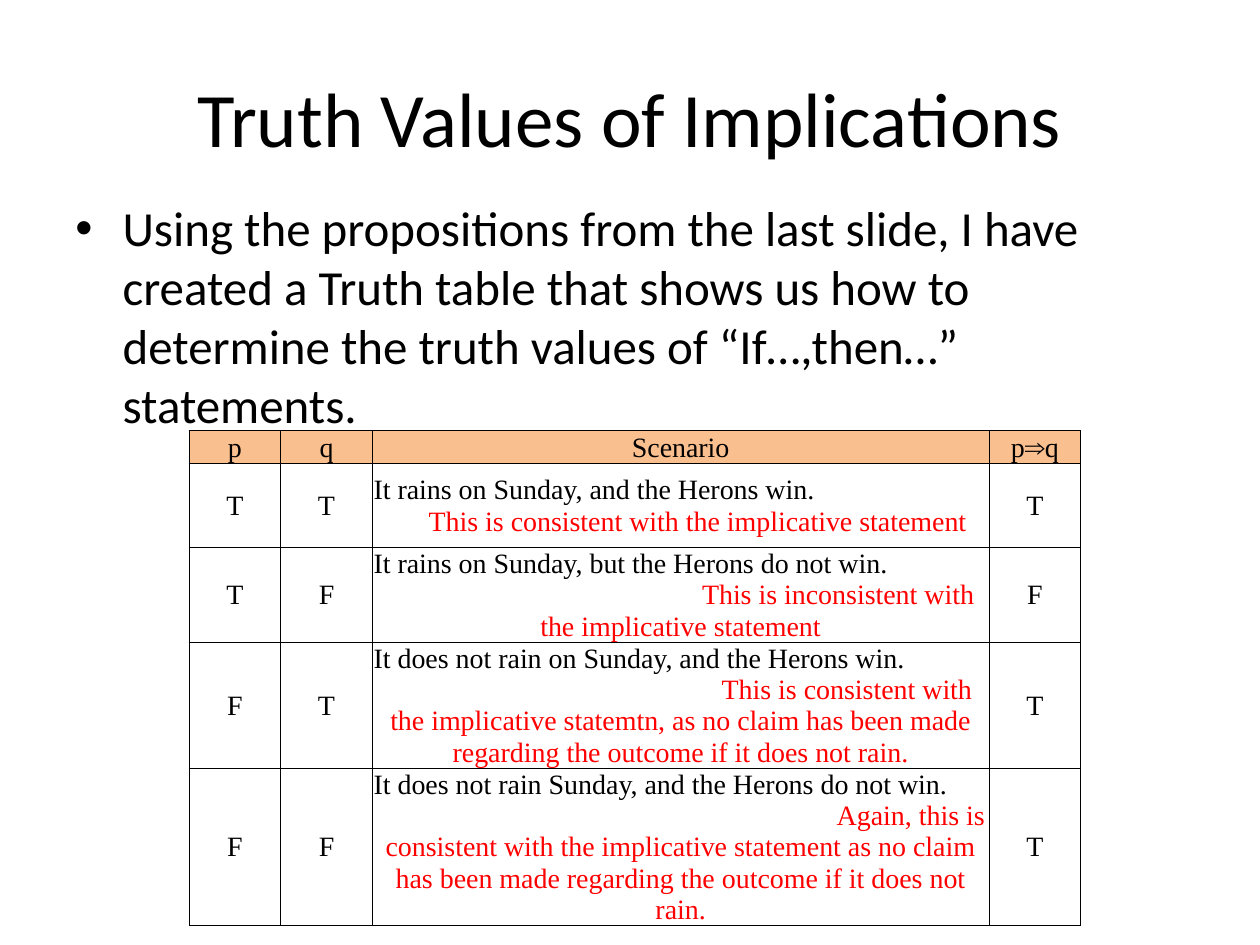
"""Build the slide on truth values of implications."""
import lxml.etree
import pptx
import pptx.dml.color
import pptx.enum.text
import pptx.oxml.ns
import pptx.util

Pt = pptx.util.Pt
ALIGN = pptx.enum.text.PP_ALIGN
ANCHOR = pptx.enum.text.MSO_ANCHOR
qn = pptx.oxml.ns.qn
COLOURS = {"text": "000000", "verdict": "FF0000", "header": "FABF8F", "border": "000000"}


def add_span(para, text, size, font, colour="text"):
    span = para.add_run()
    span.text = text
    span.font.size = Pt(size)
    span.font.name = font
    span.font.color.rgb = pptx.dml.color.RGBColor.from_string(COLOURS[colour])


def add_borders(cell):
    properties = cell._tc.get_or_add_tcPr()
    for position, side in enumerate(("lnL", "lnR", "lnT", "lnB")):
        line = lxml.etree.Element(qn(f"a:{side}"), w=str(Pt(0.5)))
        fill = lxml.etree.SubElement(line, qn("a:solidFill"))
        lxml.etree.SubElement(fill, qn("a:srgbClr"), val=COLOURS["border"])
        properties.insert(position, line)


deck = pptx.Presentation()
deck.slide_width, deck.slide_height = Pt(720), Pt(540)
page = deck.slides.add_slide(deck.slide_layouts[5])

title = page.shapes.title
title.left, title.top, title.width, title.height = Pt(36), Pt(21.6), Pt(648), Pt(90)
title.text_frame.vertical_anchor = ANCHOR.MIDDLE
para = title.text_frame.paragraphs[0]
para.alignment = ALIGN.CENTER
add_span(para, "Truth Values of Implications", 44, "Calibri")

box = page.shapes.add_textbox(Pt(36), Pt(109.5), Pt(648), Pt(372))
box.text_frame.word_wrap = True
para = box.text_frame.paragraphs[0]
properties = para._p.get_or_add_pPr()
properties.set("marL", str(Pt(27)))
properties.set("indent", str(Pt(-27)))
lxml.etree.SubElement(properties, qn("a:buFont"), typeface="Arial")
lxml.etree.SubElement(properties, qn("a:buChar"), char="•")
add_span(para, "Using the propositions from the last slide, I have created a Truth table that "
         "shows us how to determine the truth values of “If…,then…” statements.", 28, "Calibri")

headers = ("p", "q", "Scenario", "p⇒q")
scenarios = [
    ("T", "T", "It rains on Sunday, and the Herons win.",
     "This is consistent with the implicative statement", 19.5, "T"),
    ("T", "F", "It rains on Sunday, but the Herons do not win.",
     "This is inconsistent with the implicative statement", 180, "F"),
    ("F", "T", "It does not rain on Sunday, and the Herons win.",
     "This is consistent with the implicative statemtn, as no claim has been made "
     "regarding the outcome if it does not rain.", 190, "T"),
    ("F", "F", "It does not rain Sunday, and the Herons do not win.",
     "Again, this is consistent with the implicative statement as no claim has been made "
     "regarding the outcome if it does not rain.", 263, "T"),
]
widths = (52.4, 52.4, 352.4, 52.4)
heights = (18.8, 48, 54.2, 72, 89.8)

table = page.shapes.add_table(len(heights), len(widths), Pt(108), Pt(246),
                              Pt(sum(widths)), Pt(sum(heights))).table
table.first_row = table.horz_banding = False
for column, width in zip(table.columns, widths):
    column.width = Pt(width)
for row, height in zip(table.rows, heights):
    row.height = Pt(height)

for cell in table.iter_cells():
    cell.margin_left = cell.margin_right = cell.margin_top = Pt(0.7)
    cell.margin_bottom = 0
    cell.vertical_anchor = ANCHOR.MIDDLE
    cell.fill.background()
    cell.text_frame.paragraphs[0].alignment = ALIGN.CENTER

for column, header in enumerate(headers):
    cell = table.cell(0, column)
    cell.fill.solid()
    cell.fill.fore_color.rgb = pptx.dml.color.RGBColor.from_string(COLOURS["header"])
    add_span(cell.text_frame.paragraphs[0], header, 16, "Times New Roman")

for row, (p, q, event, verdict, indent, result) in enumerate(scenarios, start=1):
    for column, text in enumerate((p, q, event, result)):
        para = table.cell(row, column).text_frame.paragraphs[0]
        add_span(para, text, 16, "Times New Roman")
    frame = table.cell(row, 2).text_frame
    frame.paragraphs[0].alignment = ALIGN.LEFT
    para = frame.add_paragraph()
    para.alignment = ALIGN.CENTER
    para._p.get_or_add_pPr().set("indent", str(Pt(indent)))
    add_span(para, verdict, 16, "Times New Roman", "verdict")

for cell in table.iter_cells():
    add_borders(cell)
    for para in cell.text_frame.paragraphs:
        para.line_spacing = Pt(17.8)

deck.save("out.pptx")
